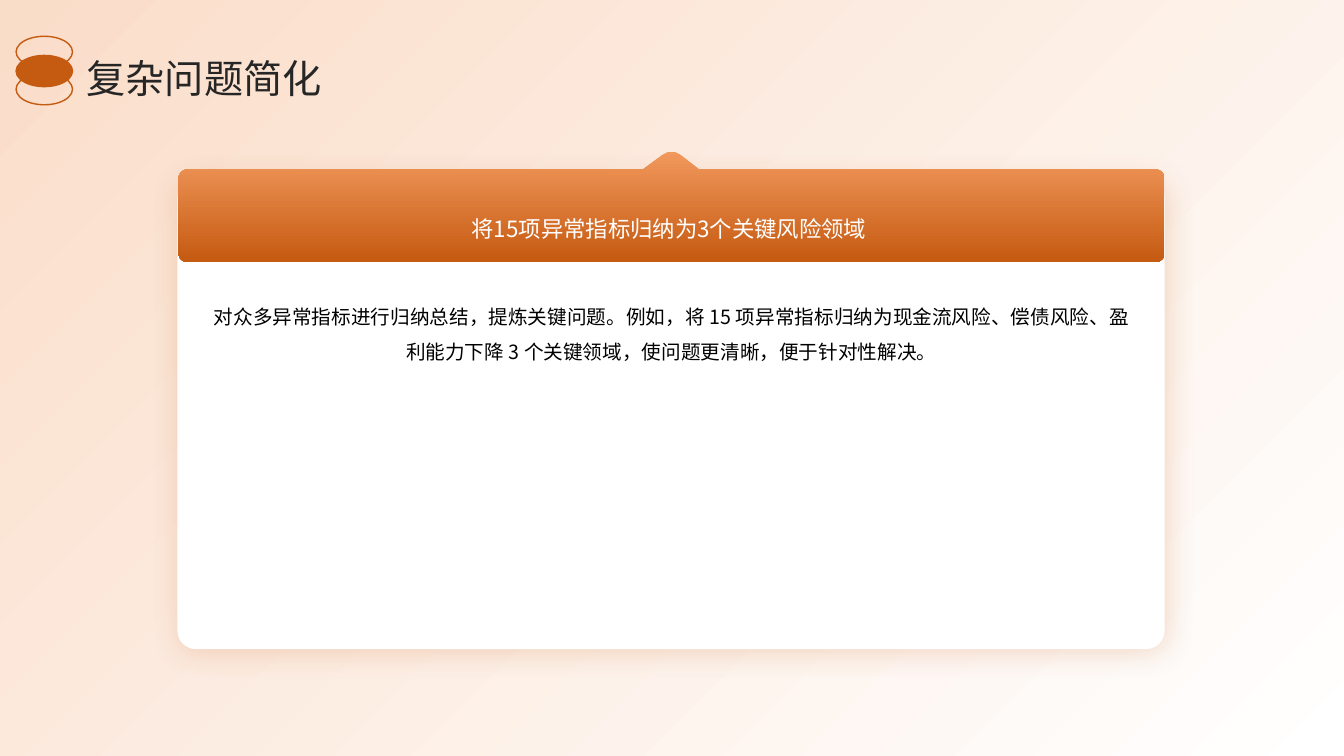
from math import cos, pi, sin

from lxml import etree
from pptx import Presentation
from pptx.dml.color import RGBColor
from pptx.enum.shapes import MSO_SHAPE
from pptx.enum.text import MSO_ANCHOR, PP_ALIGN
from pptx.oxml.ns import qn
from pptx.util import Inches, Pt

RECT, ROUND, OVAL = MSO_SHAPE.RECTANGLE, MSO_SHAPE.ROUNDED_RECTANGLE, MSO_SHAPE.OVAL
TOP, MIDDLE = MSO_ANCHOR.TOP, MSO_ANCHOR.MIDDLE
LEFT, CENTER = PP_ALIGN.LEFT, PP_ALIGN.CENTER
FONT = "Noto Sans CJK SC"
WHITE = RGBColor(255, 255, 255)
BLACK = RGBColor(0, 0, 0)
DARK = RGBColor(0x26, 0x26, 0x26)
PEACH = RGBColor(0xFA, 0xDD, 0xC9)
ORANGE = RGBColor(0xF1, 0x98, 0x5C)
RUST = RGBColor(0xC5, 0x5A, 0x11)

TEXTS = [
    ("对众多异常指标进行归纳总结，提炼关键问题。例如，将 15 项异常指标归纳为现金流风险、偿债风险、"
     "盈利能力下降 3 个关键领域，使问题更清晰，便于针对性解决。",
     (2.08, 2.91, 9.16, 3.15), 14, BLACK, CENTER, TOP, 1.5),
    ("将15项异常指标归纳为3个关键风险领域",
     (2.04, 1.88, 9.19, 0.64), 16, WHITE, CENTER, MIDDLE, 1.5),
    ("复杂问题简化", (0.86, 0.49, 11.67, 0.51), 28, DARK, LEFT, MIDDLE, 1.1),
]
PAGE = (0, 0, 13.33, 7.5)
CARD = (1.76, 1.77, 9.79, 4.67)
BANNER = (1.77, 1.68, 11.55, 2.6)
RADIUS = 0.09
PEAK = [(6.38, 1.68), (6.58, 1.53), (6.62, 1.51), (6.66, 1.51),
        (6.7, 1.51), (6.74, 1.53), (6.93, 1.68)]
OVALS = [(0.73, None), (0.55, RUST), (0.36, None)]
STEPS = 8

deck = Presentation()
deck.slide_width, deck.slide_height = Inches(13.33), Inches(7.5)
slide = deck.slides.add_slide(deck.slide_layouts[6])
shapes = slide.shapes


def blend(shape, start, end, angle):
    shape.fill.gradient()
    shape.fill.gradient_angle = angle
    for stop, color in zip(shape.fill.gradient_stops, (start, end)):
        stop.color.rgb = color


def add_plain(kind, box):
    shape = shapes.add_shape(kind, *map(Inches, box))
    shape.shadow.inherit = False
    shape.line.fill.background()
    return shape


def add_glow(shape):
    effects = shape._element.spPr.find(qn("a:effectLst"))
    glow = etree.SubElement(effects, qn("a:outerShdw"), blurRad=str(Pt(22)),
                            dist=str(Pt(3)), dir="2700000", algn="tl", rotWithShape="0")
    color = etree.SubElement(glow, qn("a:srgbClr"), val=str(RUST))
    etree.SubElement(color, qn("a:alpha"), val="22000")


def round_off(x, y, start):
    turns = [start + pi / 2 * i / STEPS for i in range(STEPS + 1)]
    return [(x + RADIUS * cos(t), y + RADIUS * sin(t)) for t in turns]


def add_banner():
    left, top, right, base = BANNER
    west, east = left + RADIUS, right - RADIUS
    north, south = top + RADIUS, base - RADIUS
    points = (PEAK + round_off(east, north, -pi / 2) + round_off(east, south, 0)
              + round_off(west, south, pi / 2) + round_off(west, north, pi))
    points = [(Inches(x), Inches(y)) for x, y in points]
    pen = shapes.build_freeform(*points[0])
    pen.add_line_segments(points[1:], close=True)
    banner = pen.convert_to_shape()
    banner.shadow.inherit = False
    banner.line.fill.background()
    blend(banner, ORANGE, RUST, 270)


def add_text(text, box, size, color, align, anchor, space):
    frame = shapes.add_textbox(*map(Inches, box)).text_frame
    frame.word_wrap = True
    frame.vertical_anchor = anchor
    frame.margin_left = frame.margin_right = frame.margin_top = frame.margin_bottom = 0
    frame.text = text
    line = frame.paragraphs[0]
    line.alignment, line.line_spacing = align, space
    run = line.runs[0]
    run.font.size, run.font.name, run.font.color.rgb = Pt(size), FONT, color
    etree.SubElement(run.font._element, qn("a:ea"), typeface=FONT)


blend(add_plain(RECT, PAGE), WHITE, PEACH, 135)
card = add_plain(ROUND, CARD)
card.adjustments[0] = 0.039
card.fill.solid()
card.fill.fore_color.rgb = WHITE
add_glow(card)
add_banner()
for item in TEXTS:
    add_text(*item)
for y, color in OVALS:
    oval = add_plain(OVAL, (0.16, y, 0.56, 0.31))
    oval.line.color.rgb, oval.line.width = RUST, Pt(1)
    if color:
        oval.fill.solid()
        oval.fill.fore_color.rgb = color
    else:
        oval.fill.background()

deck.save("out.pptx")
